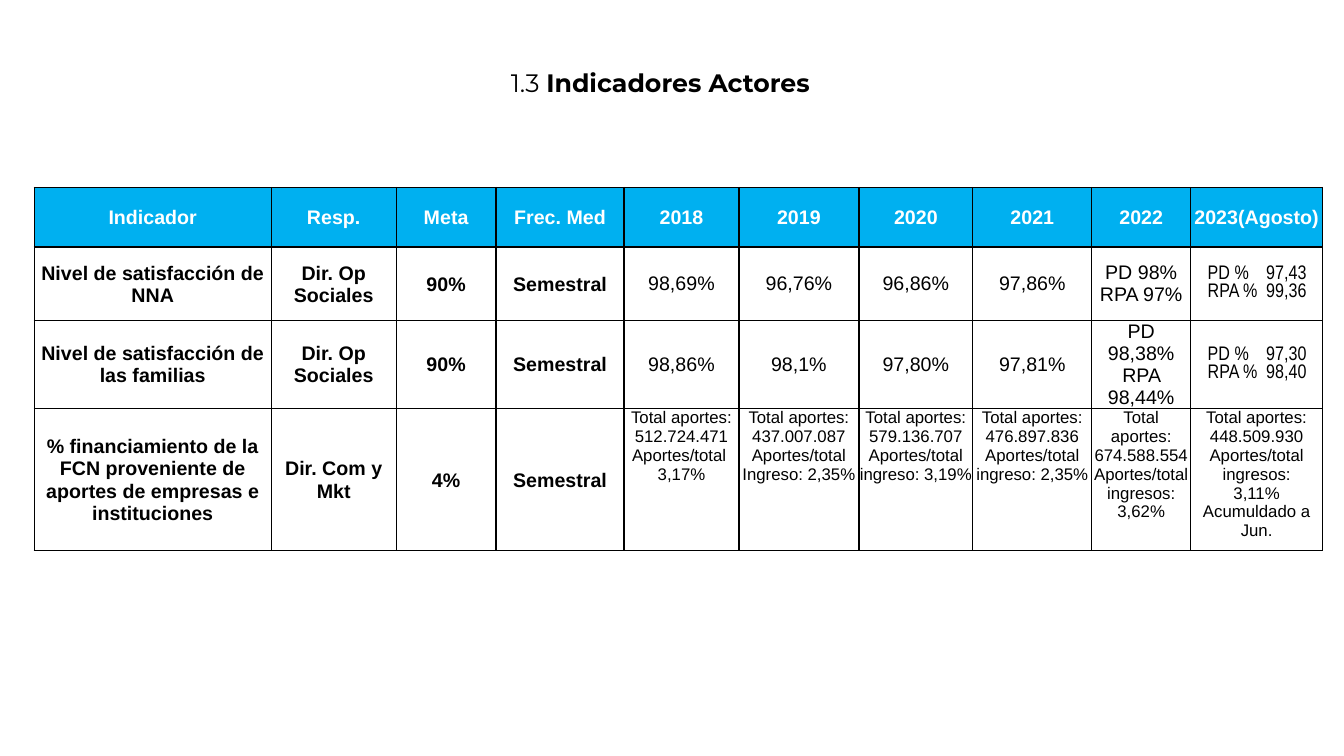
from dataclasses import dataclass

from lxml import etree
from pptx import Presentation
from pptx.dml.color import RGBColor
from pptx.enum.text import MSO_ANCHOR, MSO_AUTO_SIZE, PP_ALIGN
from pptx.oxml.ns import qn
from pptx.util import Inches, Pt

MIDDLE, TOP = MSO_ANCHOR.MIDDLE, MSO_ANCHOR.TOP
CENTER, LEFT = PP_ALIGN.CENTER, PP_ALIGN.LEFT
NO_FIT = MSO_AUTO_SIZE.NONE
TITLE_ONLY = 5


@dataclass(frozen=True)
class Theme:
    black: str = "000000"
    white: str = "FFFFFF"
    header: str = "00B0F0"
    title_font: str = "Montserrat"
    table_font: str = "Arial"
    narrow_font: str = "Arial Narrow"
    title_size: int = 18
    table_size: int = 14
    detail_size: int = 12
    border_width: int = 1


THEME = Theme()


@dataclass(frozen=True)
class CellStyle:
    color: str = THEME.black
    fill: str = THEME.white
    font: str = THEME.table_font
    size: int = THEME.table_size
    bold: bool = False
    anchor: MSO_ANCHOR = MIDDLE
    align: PP_ALIGN = CENTER
    inset: float = 0
    indent: float = 0
    tab: float = 0


HEADER = CellStyle(color=THEME.white, fill=THEME.header, bold=True, inset=0.01)
LABEL = CellStyle(bold=True, inset=0.01)
VALUE = CellStyle()
LATEST = CellStyle(font=THEME.narrow_font, align=LEFT, indent=0.17, tab=0.58)
DETAIL = CellStyle(size=THEME.detail_size, anchor=TOP)


@dataclass(frozen=True)
class IndicatorRow:
    height: float
    texts: list[str]
    styles: list[CellStyle]


COLUMN_WIDTHS = [2.35, 1.24, 0.99, 1.27, 1.14, 1.19, 1.13, 1.18, 0.98, 1.31]
VALUE_STYLES = [LABEL] * 4 + [VALUE] * 5 + [LATEST]
ROWS = [
    IndicatorRow(
        0.59,
        ["Indicador", "Resp.", "Meta", "Frec. Med", "2018", "2019", "2020", "2021",
         "2022", "2023(Agosto)"],
        [HEADER] * 10,
    ),
    IndicatorRow(
        0.73,
        ["Nivel de satisfacción de NNA", "Dir. Op Sociales", "90%", "Semestral",
         "98,69%", "96,76%", "96,86%", "97,86%", "PD 98%\nRPA 97%",
         "PD %\t97,43\nRPA %\t99,36"],
        VALUE_STYLES,
    ),
    IndicatorRow(
        0.82,
        ["Nivel de satisfacción de las familias", "Dir. Op Sociales", "90%",
         "Semestral", "98,86%", "98,1%", "97,80%", "97,81%",
         "PD 98,38%\nRPA 98,44%", "PD %\t97,30\nRPA %\t98,40"],
        VALUE_STYLES,
    ),
    IndicatorRow(
        1.41,
        ["% financiamiento de la FCN proveniente de aportes de empresas e instituciones",
         "Dir. Com y Mkt", "4%", "Semestral",
         "Total aportes: 512.724.471\nAportes/total \n3,17%",
         "Total aportes: 437.007.087\nAportes/total Ingreso: 2,35%",
         "Total aportes: 579.136.707\nAportes/total ingreso: 3,19%",
         "Total aportes: 476.897.836\nAportes/total ingreso: 2,35%",
         "Total aportes: 674.588.554\nAportes/total ingresos: 3,62%",
         "Total aportes:\n448.509.930\nAportes/total ingresos:\n3,11%\nAcumuldado a Jun."],
        [LABEL] * 4 + [DETAIL] * 6,
    ),
]


def apply_format(target, values: dict) -> None:
    for name, value in values.items():
        setattr(target, name, value)


def add_span(para, text: str, font: str, size: int, color: str, bold: bool) -> None:
    span = para.add_run()
    span.text = text
    apply_format(span.font, {"name": font, "size": Pt(size), "bold": bold})
    span.font.color.rgb = RGBColor.from_string(color)


def add_tab(para, position: float) -> None:
    stops = etree.SubElement(para._p.get_or_add_pPr(), qn("a:tabLst"))
    etree.SubElement(stops, qn("a:tab"), pos=str(Inches(position)), algn="l")


def add_borders(cell) -> None:
    properties = cell._tc.get_or_add_tcPr()
    for index, side in enumerate(("lnL", "lnR", "lnT", "lnB")):
        line = etree.Element(qn(f"a:{side}"), w=str(Pt(THEME.border_width)))
        fill = etree.SubElement(line, qn("a:solidFill"))
        etree.SubElement(fill, qn("a:srgbClr"), val=THEME.black)
        properties.insert(index, line)


def fill_cell(cell, text: str, style: CellStyle) -> None:
    apply_format(cell, {
        "vertical_anchor": style.anchor,
        "margin_left": Inches(style.inset + style.indent),
        "margin_right": Inches(style.inset),
        "margin_top": Inches(style.inset),
        "margin_bottom": 0,
    })
    cell.fill.solid()
    cell.fill.fore_color.rgb = RGBColor.from_string(style.fill)
    add_borders(cell)
    for index, line in enumerate(text.split("\n")):
        frame = cell.text_frame
        para = frame.add_paragraph() if index else frame.paragraphs[0]
        para.alignment = style.align
        if style.tab:
            add_tab(para, style.tab)
        add_span(para, line, style.font, style.size, style.color, style.bold)


def add_title(page) -> None:
    box = page.shapes.title
    apply_format(box, {"left": Inches(2.46), "top": Inches(0.41),
                       "width": Inches(8.11), "height": Inches(0.81)})
    apply_format(box.text_frame, {"vertical_anchor": MIDDLE, "word_wrap": True,
                                  "auto_size": NO_FIT})
    para = box.text_frame.paragraphs[0]
    para.alignment = CENTER
    for text, font, bold in (
        (" ", THEME.table_font, False),
        ("1.3 ", THEME.title_font, False),
        ("Indicadores Actores", THEME.title_font, True),
    ):
        add_span(para, text, font, THEME.title_size, THEME.black, bold)


def add_indicators(page) -> None:
    table = page.shapes.add_table(
        len(ROWS), len(COLUMN_WIDTHS), Inches(0.34), Inches(1.86),
        Inches(sum(COLUMN_WIDTHS)), Inches(sum(row.height for row in ROWS)),
    ).table
    table.horz_banding = False
    for column, width in zip(table.columns, COLUMN_WIDTHS):
        column.width = Inches(width)
    for table_row, row in zip(table.rows, ROWS):
        table_row.height = Inches(row.height)
        for cell, text, style in zip(table_row.cells, row.texts, row.styles):
            fill_cell(cell, text, style)


def main() -> None:
    deck = Presentation()
    apply_format(deck, {"slide_width": Inches(13.33), "slide_height": Inches(7.5)})
    page = deck.slides.add_slide(deck.slide_layouts[TITLE_ONLY])
    add_title(page)
    add_indicators(page)
    deck.save("out.pptx")


if __name__ == "__main__":
    main()
